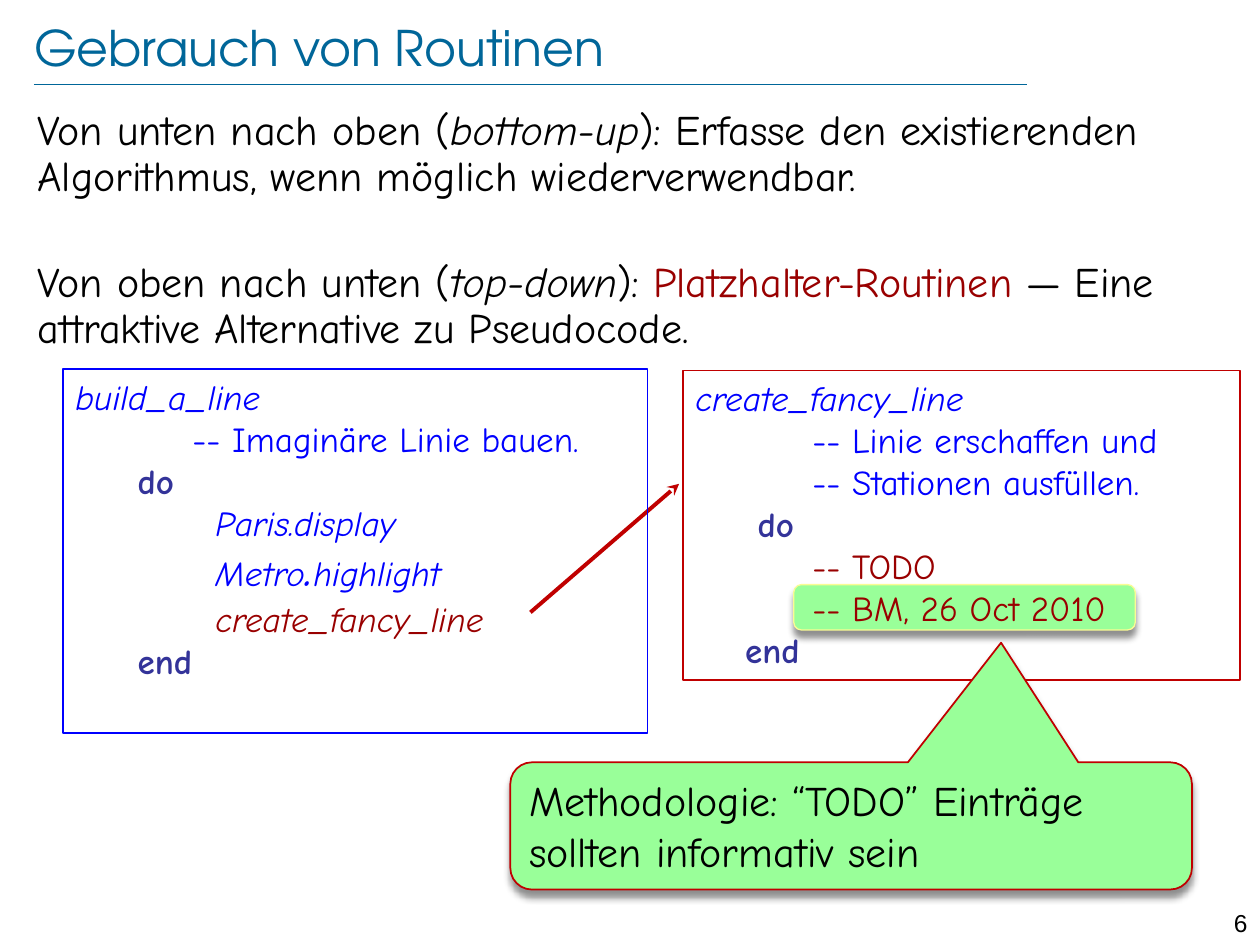
"""Build the slide on using routines bottom-up and top-down."""
import pptx
import pptx.dml.color
import pptx.enum.shapes
import pptx.enum.text
import pptx.oxml
import pptx.oxml.ns
import pptx.util

Inches, Pt = pptx.util.Inches, pptx.util.Pt
Shape = pptx.enum.shapes.MSO_SHAPE
Anchor = pptx.enum.text.MSO_ANCHOR
Align = pptx.enum.text.PP_ALIGN

BODY_FONT = "Comic Neue"
THEME = {
    "rule": "006699", "blue": "0000FF", "red": "C00000",
    "green": "99FF99", "yellow": "FAFC94", "shadow": "000000",
    "styles": {
        "title": {"name": "TeX Gyre Adventor", "size": 28, "color": "006699"},
        "body": {"name": BODY_FONT, "size": 24, "color": "000000"},
        "term": {"name": BODY_FONT, "size": 24, "color": "000000", "italic": True},
        "accent": {"name": BODY_FONT, "size": 24, "color": "990000"},
        "feature": {"name": BODY_FONT, "size": 20, "color": "0000FF", "italic": True},
        "dot": {"name": BODY_FONT, "size": 32, "color": "0000FF", "italic": True},
        "comment": {"name": BODY_FONT, "size": 20, "color": "0000FF"},
        "keyword": {"name": BODY_FONT, "size": 20, "color": "333399", "bold": True},
        "todo": {"name": BODY_FONT, "size": 20, "color": "990000"},
        "stub": {"name": BODY_FONT, "size": 20, "color": "990000", "italic": True},
        "number": {"name": "Arial", "size": 14, "color": "000000"},
    },
}

TITLE = [[("Gebrauch von Routinen", "title")]]
APPROACHES = [
    [("Von unten nach oben (", "body"), ("bottom-up", "term"),
     ("): Erfasse den existierenden Algorithmus, wenn möglich wiederverwendbar.", "body")],
    [("Von oben nach unten (", "body"), ("top-down", "term"), ("): ", "body"),
     ("Platzhalter-Routinen ", "accent"),
     ("— Eine attraktive Alternative zu Pseudocode.", "body")],
]
CALLER = [
    [("build_a_line", "feature")],
    [("          -- Imaginäre Linie bauen.", "comment")],
    [("     do", "keyword")],
    [("            Paris.display", "feature")],
    [("            Metro", "feature"), (".", "dot"), ("highlight", "feature")],
    [("            create_fancy_line", "stub")],
    [("     end", "keyword")],
]
PLACEHOLDER_ROUTINE = [
    [("create_fancy_line", "feature")],
    [("          -- Linie erschaffen und", "comment")],
    [("          -- Stationen ausfüllen.", "comment")],
    [("     do", "keyword")],
    [("          -- TODO", "todo")],
    [("          -- BM, 26 Oct 2010", "todo")],
    [("    end", "keyword")],
]
METHODOLOGY = [[("Methodologie: “TODO” Einträge sollten informativ sein", "body")]]
PAGE = [[("6", "number")]]


def rgb(code):
    return pptx.dml.color.RGBColor.from_string(code)


def write(frame, paragraphs, anchor=Anchor.TOP, **formats):
    frame.word_wrap = True
    frame.auto_size = pptx.enum.text.MSO_AUTO_SIZE.NONE
    frame.vertical_anchor = anchor
    for index, runs in enumerate(paragraphs):
        paragraph = frame.paragraphs[0] if index == 0 else frame.add_paragraph()
        for key, value in {"alignment": Align.LEFT, **formats}.items():
            if index or key != "space_before":
                setattr(paragraph, key, value)
        for text, style in runs:
            run = paragraph.add_run()
            run.text = text
            for key, value in THEME["styles"][style].items():
                if key == "color":
                    run.font.color.rgb = rgb(value)
                else:
                    setattr(run.font, key, Pt(value) if key == "size" else value)
    return frame


def add_text(slide, at, paragraphs, **formats):
    box = slide.shapes.add_textbox(*map(Inches, at))
    return write(box.text_frame, paragraphs, **formats)


def add_box(slide, kind, at, line, width, fill=None, paragraphs=()):
    box = slide.shapes.add_shape(kind, *map(Inches, at))
    box.shadow.inherit = False
    box.line.color.rgb = rgb(THEME[line])
    box.line.width = Pt(width)
    if fill:
        box.fill.solid()
        box.fill.fore_color.rgb = rgb(THEME[fill])
    else:
        box.fill.background()
    write(box.text_frame, paragraphs)
    return box


def add_shadow(box):
    effects = box.element.spPr.find(pptx.oxml.ns.qn("a:effectLst"))
    effects.append(pptx.oxml.parse_xml(
        f'<a:outerShdw {pptx.oxml.ns.nsdecls("a")} blurRad="{Pt(4)}" dist="{Pt(4)}" '
        f'dir="5400000" rotWithShape="0"><a:srgbClr val="{THEME["shadow"]}">'
        '<a:alpha val="43000"/></a:srgbClr></a:outerShdw>'))


def add_line(slide, ends, color, width, arrow=None):
    line = slide.shapes.add_connector(
        pptx.enum.shapes.MSO_CONNECTOR.STRAIGHT, *map(Inches, ends))
    line.line.color.rgb = rgb(THEME[color])
    line.line.width = Pt(width)
    namespace = pptx.oxml.ns.nsdecls("a")
    if arrow:
        line.line._get_or_add_ln().append(
            pptx.oxml.parse_xml(f'<a:tailEnd {namespace} type="{arrow}"/>'))
    line.element.spPr.append(pptx.oxml.parse_xml(f"<a:effectLst {namespace}/>"))


def main():
    deck = pptx.Presentation()
    deck.slide_width, deck.slide_height = Inches(10), Inches(7.5)
    slide = deck.slides.add_slide(deck.slide_layouts[5])

    title = slide.shapes.title
    places = {"left": 0.27, "top": 0.13, "width": 8.69, "height": 0.48}
    for side, value in places.items():
        setattr(title, side, Inches(value))
    for side in ("left", "top", "right", "bottom"):
        setattr(title.text_frame, f"margin_{side}", 0)
    write(title.text_frame, TITLE, Anchor.MIDDLE)

    add_line(slide, (0.27, 0.67, 8.15, 0.67), "rule", 0.25)
    add_text(slide, (9.45, 7.16, 0.55, 0.24), PAGE, alignment=Align.RIGHT)
    add_text(slide, (0.2, 0.82, 9.61, 2.1), APPROACHES,
             line_spacing=0.9, space_before=Pt(35))

    highlight = add_box(slide, Shape.ROUNDED_RECTANGLE, (6.3, 4.64, 2.71, 0.36),
                        "yellow", 0.75, "green")
    add_shadow(highlight)
    add_box(slide, Shape.RECTANGLE, (5.42, 2.94, 4.42, 2.46), "red", 1,
            paragraphs=PLACEHOLDER_ROUTINE)
    add_line(slide, (4.21, 4.86, 5.39, 3.84), "red", 2.25, "stealth")
    caller = add_box(slide, Shape.RECTANGLE, (0.5, 2.93, 4.64, 2.89), "blue", 1,
                     paragraphs=CALLER)
    caller.text_frame.paragraphs[4].line_spacing = 0.8

    callout = add_box(slide, Shape.ROUNDED_RECTANGULAR_CALLOUT, (4.05, 6.05, 5.41, 1.01),
                      "red", 1, "green", METHODOLOGY)
    for index, value in enumerate((0.22, -1.44, 0.17)):
        callout.adjustments[index] = value
    add_shadow(callout)
    deck.save("out.pptx")


if __name__ == "__main__":
    main()
